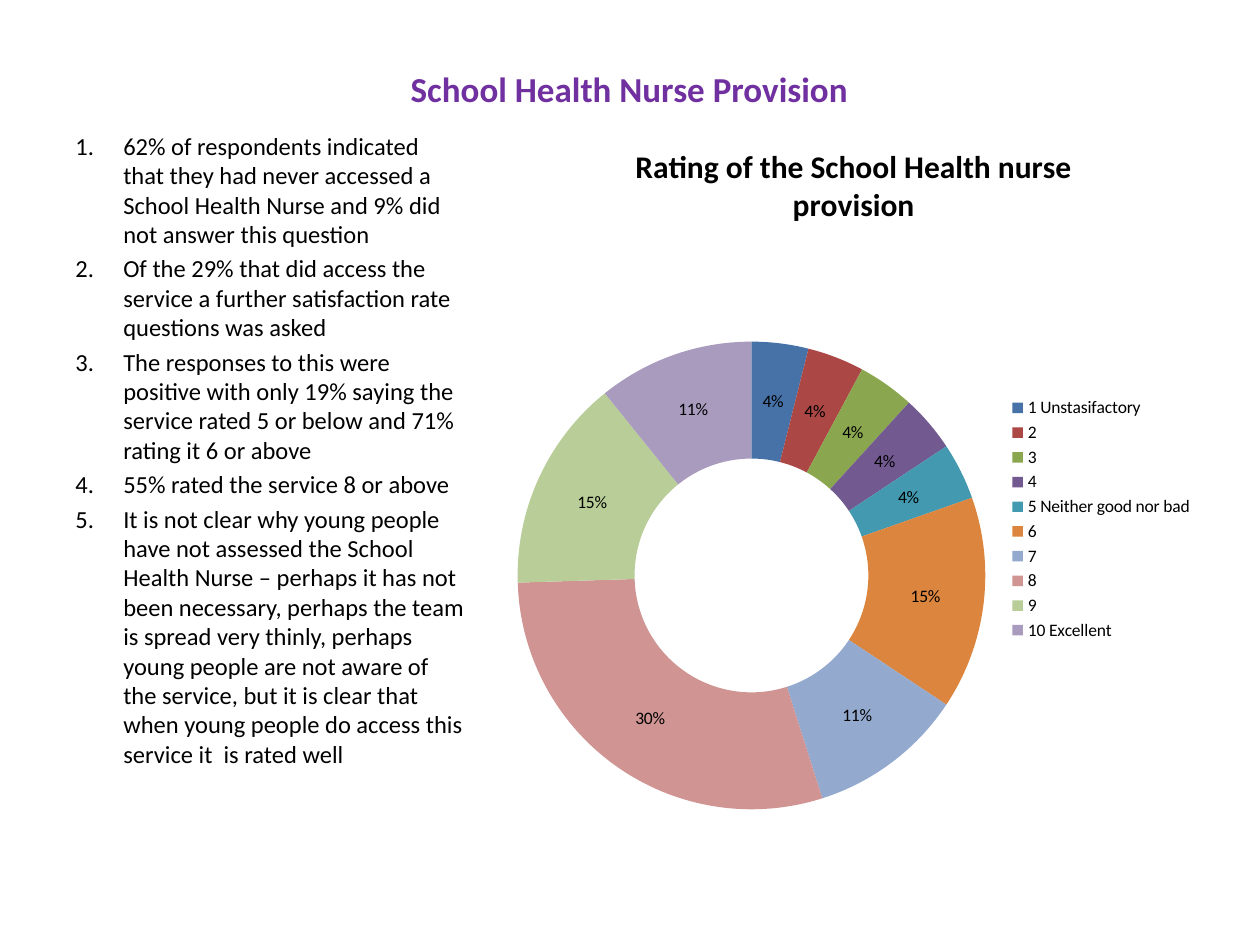
from pptx import Presentation
from pptx.chart.data import CategoryChartData
from pptx.dml.color import RGBColor
from pptx.enum import chart as ch, text
from pptx.oxml import parse_xml
from pptx.oxml.ns import nsdecls
from pptx.util import Inches, Pt

FONT = "Calibri"
COLORS = {"title": "7030A0", "text": "000000"}
RATINGS = [
    ("1 Unstasifactory ", 4, "4672A8"),
    ("2", 4, "AB4744"),
    ("3", 4, "8AA64F"),
    ("4", 4, "725990"),
    ("5 Neither good nor bad", 4, "4299B0"),
    ("6", 15, "DC853E"),
    ("7", 11, "93A9CE"),
    ("8", 30, "D09493"),
    ("9", 15, "B8CD97"),
    ("10 Excellent ", 11, "A99BBE"),
]
FINDINGS = [
    "62% of respondents indicated that they had never accessed a School Health Nurse "
    "and 9% did not answer this question",
    "Of the 29% that did access the service a further satisfaction rate questions was asked",
    "The responses to this were positive with only 19% saying the service rated 5 or below "
    "and 71% rating it 6 or above",
    "55% rated the service 8 or above",
    "It is not clear why young people have not assessed the School Health Nurse – perhaps it "
    "has not been necessary, perhaps the team is spread very thinly, perhaps young people are "
    "not aware of the service, but it is clear that when young people do access this service "
    "it  is rated well",
]


def style_font(font, size, color="text", bold=False):
    font.name = FONT
    font.size = Pt(size)
    font.bold = bold
    font.color.rgb = RGBColor.from_string(COLORS[color])


def add_text_frame(s, x, y, w, h):
    tf = s.shapes.add_textbox(Inches(x), Inches(y), Inches(w), Inches(h)).text_frame
    tf.word_wrap = True
    return tf


def add_title(s, title):
    tf = add_text_frame(s, 0.5, 0.3, 8.99, 0.62)
    tf.vertical_anchor = text.MSO_ANCHOR.BOTTOM
    p = tf.paragraphs[0]
    p.text = title
    p.alignment = text.PP_ALIGN.CENTER
    style_font(p.runs[0].font, 20, "title", True)


def add_numbered_list(s, items):
    tf = add_text_frame(s, 0.5, 0.99, 3.29, 6.06)
    for i, item in enumerate(items):
        p = tf.add_paragraph() if i else tf.paragraphs[0]
        p.text = item
        p.space_before = Pt(2.8)
        style_font(p.runs[0].font, 14)
        pPr = p._p.get_or_add_pPr()
        pPr.set("marL", str(Inches(0.38)))
        pPr.set("indent", str(Inches(-0.38)))
        pPr.append(parse_xml(f'<a:buAutoNum {nsdecls("a")} type="arabicPeriod"/>'))


def make_layout(x, y, w, h, inner=False):
    """Return a manual layout, in fractions of the chart's size."""
    target = '<c:layoutTarget val="inner"/>' if inner else ""
    return parse_xml(
        f'<c:layout {nsdecls("c")}><c:manualLayout>{target}'
        '<c:xMode val="edge"/><c:yMode val="edge"/>'
        f'<c:x val="{x}"/><c:y val="{y}"/><c:w val="{w}"/><c:h val="{h}"/>'
        "</c:manualLayout></c:layout>"
    )


def add_rating_chart(s, title):
    data = CategoryChartData()
    data.categories = [name for name, _, _ in RATINGS]
    data.add_series("Series 1", [value for _, value, _ in RATINGS])
    chart = s.shapes.add_chart(
        ch.XL_CHART_TYPE.DOUGHNUT,
        Inches(3.98), Inches(0.92), Inches(5.59), Inches(6.4), data,
    ).chart
    style_font(chart.font, 10)

    chart.has_title = True
    tf = chart.chart_title.text_frame
    tf.text = title
    style_font(tf.paragraphs[0].runs[0].font, 18, bold=True)

    chart.has_legend = True
    legend = chart.legend
    legend.position = ch.XL_LEGEND_POSITION.RIGHT
    legend.include_in_layout = False
    legend._element.find("{*}legendPos").addnext(make_layout(0.71, 0.33, 0.28, 0.62))

    plot = chart.plots[0]
    plot.vary_by_categories = True
    plot._element.find("{*}holeSize").set("val", "50")
    plot_area = plot._element.getparent()
    for old in plot_area.findall("{*}layout"):
        plot_area.remove(old)
    plot_area.insert(0, make_layout(0.02, 0.28, 0.67, 0.58, inner=True))

    plot.has_data_labels = True
    labels = plot.data_labels
    labels.show_value = True
    labels.show_percentage = False
    labels.number_format = '0"%"'
    labels.number_format_is_linked = False
    style_font(labels.font, 10)

    for i, (_, _, color) in enumerate(RATINGS):
        fill = plot.series[0].points[i].format.fill
        fill.solid()
        fill.fore_color.rgb = RGBColor.from_string(color)


def main():
    prs = Presentation()
    prs.slide_width, prs.slide_height = Inches(10), Inches(7.5)
    s = prs.slides.add_slide(prs.slide_layouts[6])
    add_title(s, "School Health Nurse Provision")
    add_numbered_list(s, FINDINGS)
    add_rating_chart(s, "Rating of the School Health nurse provision")
    prs.save("out.pptx")


if __name__ == "__main__":
    main()
